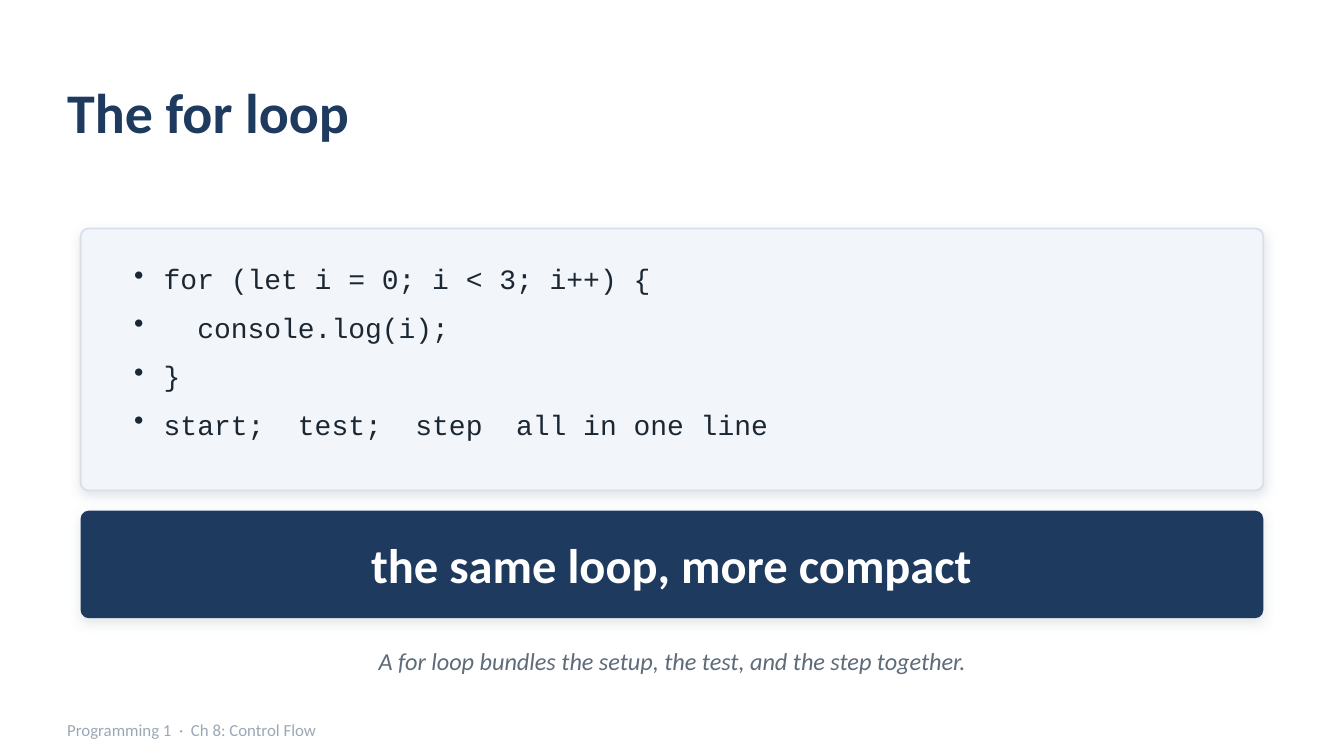
from lxml import etree
from pptx import Presentation
from pptx import util as u
from pptx.dml.color import RGBColor
from pptx.enum import shapes, text
from pptx.oxml import ns

COLORS = {
    "navy": "1F3A5F",
    "panel": "F2F5F9",
    "border": "D8E0E9",
    "ink": "1B2733",
    "caption": "5E6B79",
    "muted": "9AA8B6",
    "white": "FFFFFF",
}
FORMATS = {
    "title": {"name": "Calibri", "size": 30, "color": "navy", "bold": True},
    "code": {"name": "Courier New", "size": 15, "color": "ink"},
    "banner": {"name": "Calibri", "size": 26, "color": "white", "bold": True},
    "caption": {"name": "Calibri", "size": 13, "color": "caption", "italic": True},
    "footer": {"name": "Calibri", "size": 9, "color": "muted"},
}
CODE_LINES = [
    "for (let i = 0; i < 3; i++) {",
    "  console.log(i);",
    "}",
    "start;  test;  step  all in one line",
]
CARD_LEFT, CARD_WIDTH = 0.6, 8.8
CORNER_RADIUS = 0.06


def rgb(name):
    return RGBColor.from_string(COLORS[name])


class SlideBuilder:
    def __init__(self, slide):
        self.slide = slide
        background = slide.background.fill
        background.solid()
        background.fore_color.rgb = rgb("white")

    def add_span(self, para, words, style):
        span = para.add_run()
        span.text = words
        for key, value in FORMATS[style].items():
            if key == "color":
                span.font.color.rgb = rgb(value)
            else:
                setattr(span.font, key, u.Pt(value) if key == "size" else value)

    def add_box(self, place):
        box = self.slide.shapes.add_textbox(*map(u.Inches, place))
        box.text_frame.word_wrap = True
        return box.text_frame

    def add_label(self, words, place, style, align=text.PP_ALIGN.LEFT):
        """Add one line of text, vertically centred in a box without margins."""
        frame = self.add_box(place)
        frame.vertical_anchor = text.MSO_ANCHOR.MIDDLE
        for side in ("left", "top", "right", "bottom"):
            setattr(frame, f"margin_{side}", 0)
        para = frame.paragraphs[0]
        para.alignment = align
        self.add_span(para, words, style)

    def add_bullets(self, lines, place, style):
        frame = self.add_box(place)
        indent = u.Inches(0.22)
        for index, line in enumerate(lines):
            para = frame.add_paragraph() if index else frame.paragraphs[0]
            properties = para._p.get_or_add_pPr()
            properties.set("marL", str(indent))
            properties.set("indent", str(-indent))
            etree.SubElement(properties, ns.qn("a:buSzPct"), val="100000")
            etree.SubElement(properties, ns.qn("a:buChar"), char="•")
            para.space_after = u.Pt(8)
            self.add_span(para, line, style)

    def add_card(self, place, fill, border=None):
        """Add a rounded rectangle with a soft shadow below it."""
        card = self.slide.shapes.add_shape(
            shapes.MSO_SHAPE.ROUNDED_RECTANGLE, *map(u.Inches, place))
        card.adjustments[0] = CORNER_RADIUS / place[3]
        card.fill.solid()
        card.fill.fore_color.rgb = rgb(fill)
        if border:
            card.line.color.rgb = rgb(border)
            card.line.width = u.Pt(1)
        else:
            card.line.fill.background()
        card.shadow.inherit = False
        effects = card._element.spPr.find(ns.qn("a:effectLst"))
        shadow = etree.SubElement(
            effects, ns.qn("a:outerShdw"), blurRad=str(u.Pt(6)),
            dist=str(u.Pt(2)), dir=str(90 * 60000), rotWithShape="0")
        color = etree.SubElement(shadow, ns.qn("a:srgbClr"), val=COLORS["muted"])
        etree.SubElement(color, ns.qn("a:alpha"), val="28000")


def main():
    deck = Presentation()
    deck.slide_width = u.Inches(10)
    deck.slide_height = u.Inches(10 * 9 / 16)
    page = SlideBuilder(deck.slides.add_slide(deck.slide_layouts[6]))
    center = text.PP_ALIGN.CENTER

    page.add_label("The for loop", (0.5, 0.4, 9, 0.85), "title")

    page.add_card((CARD_LEFT, 1.7, CARD_WIDTH, 1.95), "panel", "border")
    page.add_bullets(CODE_LINES, (0.9, 1.9, 8.2, 1.6), "code")

    page.add_card((CARD_LEFT, 3.8, CARD_WIDTH, 0.8), "navy")
    page.add_label("the same loop, more compact",
                   (CARD_LEFT, 3.83, CARD_WIDTH, 0.74), "banner", center)

    page.add_label("A for loop bundles the setup, the test, and the step together.",
                   (CARD_LEFT, 4.72, CARD_WIDTH, 0.4), "caption", center)
    page.add_label("Programming 1  ·  Ch 8: Control Flow", (0.5, 5.3, 8, 0.26), "footer")

    deck.save("out.pptx")


if __name__ == "__main__":
    main()
